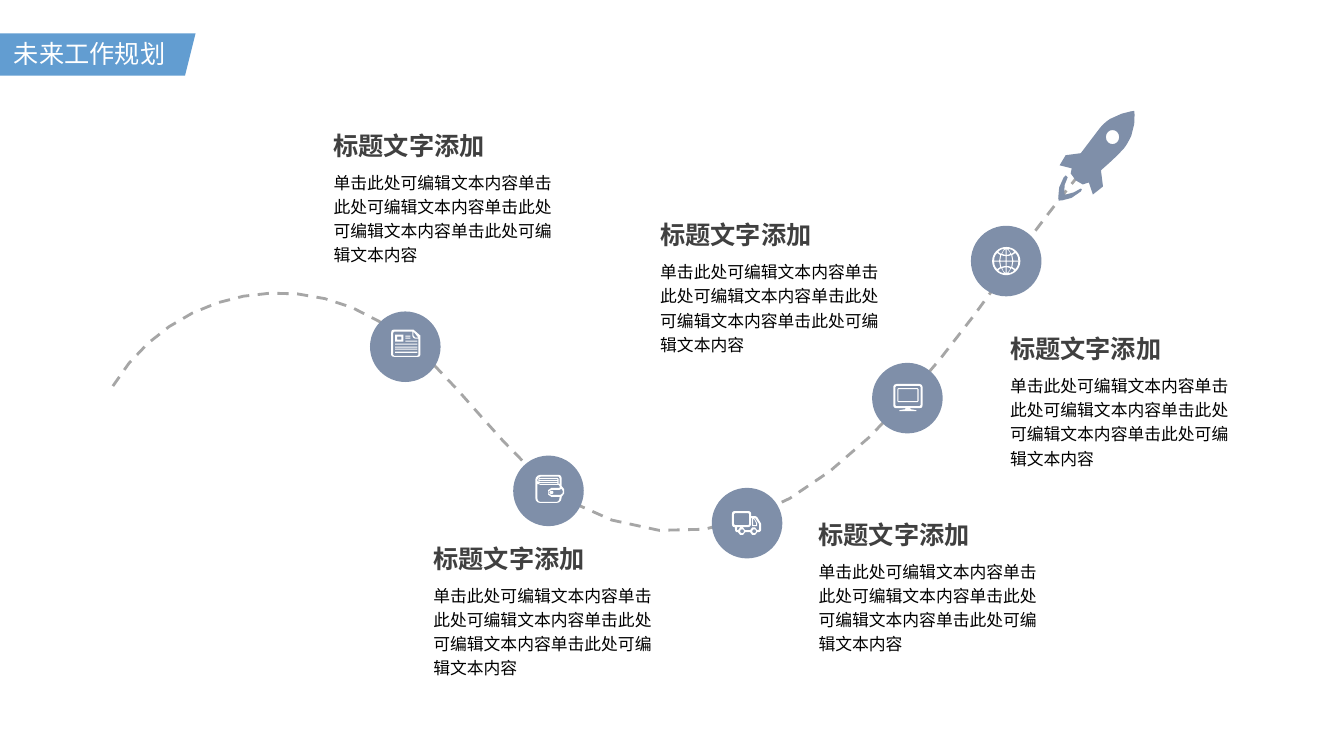
from itertools import product
from math import cos, pi, sin

from lxml import etree
from pptx import Presentation
from pptx.dml.color import RGBColor
from pptx.enum.dml import MSO_LINE
from pptx.enum.shapes import MSO_SHAPE
from pptx.enum.text import MSO_AUTO_SIZE
from pptx.oxml.ns import qn
from pptx.util import Pt

PX = 9144
ICON_STEPS, TRAIL_STEPS = 3, 10
OVAL, PARALLELOGRAM = MSO_SHAPE.OVAL, MSO_SHAPE.PARALLELOGRAM
DASH = MSO_LINE.DASH
GROW = MSO_AUTO_SIZE.SHAPE_TO_FIT_TEXT

SLATE = RGBColor(0x7F, 0x8F, 0xA9)
BLUE = RGBColor(0x62, 0x9D, 0xD1)
GRAY = RGBColor(0xA6, 0xA6, 0xA6)
CHARCOAL = RGBColor(0x40, 0x40, 0x40)
BLACK = RGBColor(0, 0, 0)
WHITE = RGBColor(0xFF, 0xFF, 0xFF)

HEADING_FONT, BODY_FONT = "Arial", "Noto Sans CJK JP"
HEADING = "标题文字添加"
BODY = "单击此处可编辑文本内容" * 4
DIAMETER = 70


def box(x, y, w, h, r=0):
    """Return the contour of a rectangle with corner radius r."""
    if not r:
        return [(x, y), (x + w, y), (x + w, y + h), (x, y + h)]
    steps = 1 + int(r / 2)
    centers = [(x + w - r, y + h - r), (x + r, y + h - r), (x + r, y + r), (x + w - r, y + r)]
    return [(cx + r * cos(a), cy + r * sin(a))
            for corner, (cx, cy) in enumerate(centers)
            for a in [(corner + step / steps) * pi / 2 for step in range(steps + 1)]]


def mirror(contour, size, flips):
    """Flip a contour inside a square, by axis."""
    return [tuple(size - v if flips[i % 2] else v for i, v in enumerate(node)) for node in contour]


def flatten(contour, steps):
    """Turn points and cubic curves into plain points."""
    points = [contour[0]]
    for node in contour[1:]:
        if len(node) == 2:
            points.append(node)
            continue
        controls = [points[-1], node[:2], node[2:4], node[4:]]
        for step in range(1, steps + 1):
            t = step / steps
            weights = ((1 - t) ** 3, 3 * t * (1 - t) ** 2, 3 * t * t * (1 - t), t ** 3)
            points.append(tuple(sum(w * c[axis] for w, c in zip(weights, controls))
                                for axis in (0, 1)))
    return points


class Canvas:
    """Draws elements on one slide in px."""

    def __init__(self, slide):
        self.slide = slide

    def shape(self, kind, x, y, w, h, color):
        """Add a flat preset shape."""
        shape = self.slide.shapes.add_shape(kind, x * PX, y * PX, w * PX, h * PX)
        self.paint(shape, color)

    def paint(self, shape, color):
        """Fill a shape without line or shadow."""
        shape.shadow.inherit = False
        shape.fill.solid()
        shape.fill.fore_color.rgb = color
        shape.line.fill.background()

    def outline(self, contours, x=0, y=0, steps=ICON_STEPS, close=True):
        """Build a freeform whose nested contours are holes."""
        builder = None
        for contour in contours:
            points = [((x + px) * PX, (y + py) * PX) for px, py in flatten(contour, steps)]
            if builder is None:
                builder = self.slide.shapes.build_freeform(*points[0], scale=1.0)
            else:
                builder.move_to(*points[0])
            builder.add_line_segments(points[1:], close=close)
        return builder.convert_to_shape()

    def icon(self, contours, x, y, color):
        """Add a filled icon."""
        self.paint(self.outline(contours, x, y), color)

    def dashed_path(self, contour, color, width):
        """Add an open dashed curve."""
        curve = self.outline([contour], steps=TRAIL_STEPS, close=False)
        curve.shadow.inherit = False
        curve.fill.background()
        curve.line.color.rgb = color
        curve.line.width = Pt(width)
        curve.line.dash_style = DASH

    def text(self, words, x, y, w, h, size, color, font=HEADING_FONT, bold=False, spacing=None):
        """Add a wrapped text box of one paragraph."""
        frame = self.slide.shapes.add_textbox(x * PX, y * PX, w * PX, h * PX).text_frame
        frame.word_wrap = True
        frame.auto_size = GROW
        paragraph = frame.paragraphs[0]
        paragraph.text = words
        paragraph.line_spacing = spacing
        style = paragraph.font
        style.size, style.bold, style.name = Pt(size), bold, font
        style.color.rgb = color
        east_asian = etree.SubElement(paragraph.runs[0].font._element, qn("a:ea"))
        east_asian.set("typeface", BODY_FONT)


TRAIL = [(112, 383), (160, 303, 261, 269, 349, 305), (455, 348, 498, 479, 607, 516),
         (766, 570, 894, 415, 998, 269), (1025, 230, 1055, 192, 1085, 155)]

ROCKET = [
    [(1072, 187), (1073, 188), (1072, 190), (1064, 199, 1050, 199, 1050, 199),
     (1050, 199, 1048, 185, 1055, 176), (1057, 174), (1059, 176),
     (1054, 183, 1056, 193, 1056, 193), (1056, 193, 1066, 192, 1072, 187)],
    box(1097, 129, 13, 14, 6.5),
    [(1125, 110), (1125, 110, 1113, 111, 1101, 118), (1098, 120, 1094, 123, 1091, 127),
     (1072, 152), (1057, 154), (1051, 164), (1063, 167), (1062, 172), (1067, 179),
     (1074, 183), (1080, 181), (1084, 193), (1094, 185), (1092, 169),
     (1100, 162, 1110, 153, 1115, 147), (1118, 143, 1120, 139, 1122, 135),
     (1127, 123, 1125, 110, 1125, 110)],
]

NEWSPAPER = [
    [(3, 0), (22, 0), (29, 6), (29, 25), (28, 27, 28, 27, 26, 27), (3, 27),
     (1, 27, 0, 26, 0, 25), (0, 3), (0, 1, 1, 0, 3, 0)],
    [(3, 2), (21, 2), (21, 6), (21, 7, 22, 9, 24, 9), (27, 9), (27, 25), (26, 26), (3, 26),
     (2, 25), (2, 3)],
    [(22, 2), (22, 6), (24, 8), (27, 8)],
    box(4, 5, 8, 7), box(6, 7, 4, 3),
    box(14, 6, 5, 1), box(14, 8, 5, 1), box(14, 11, 12, 1),
] + [box(4, y, 22, 1) for y in (14, 17, 19, 22)]

WALLET = [
    [(5, 0), (23, 0), (25, 0, 26, 2, 26, 3), (26, 11), (30, 14, 30, 19, 26, 22), (26, 23),
     (26, 26, 24, 28, 21, 28), (5, 28), (2, 28, 0, 26, 0, 23), (0, 5), (0, 3, 2, 0, 5, 0)],
    [(2, 9), (2, 23), (2, 25, 3, 27, 5, 27), (21, 27), (23, 27, 24, 25, 24, 23), (24, 22),
     (16, 22), (11, 22, 11, 13, 16, 13), (24, 13), (24, 11), (23, 10), (5, 10), (2, 9)],
    [(26, 14), (24, 15), (16, 15), (12, 15, 12, 20, 16, 20), (25, 20),
     (28, 19, 28, 16, 26, 14)],
    [(5, 2), (2, 2, 1, 6, 3, 8), (3, 4), (4, 3), (22, 3), (23, 4), (23, 9), (24, 9), (24, 3),
     (23, 2)],
    box(14, 16, 4, 3, 1),
] + [box(4, y, 18, 1) for y in (4, 6, 8)]

TRUCK = [
    [(3, 0), (16, 0), (18, 0, 19, 1, 19, 3), (19, 5), (23, 5), (25, 6), (28, 11),
     (29, 13), (29, 18), (29, 20, 28, 21, 26, 21), (25, 21),
     (24, 25, 19, 25, 18, 21), (13, 21), (12, 25, 7, 25, 6, 21), (5, 21),
     (4, 21, 3, 20, 3, 18), (3, 16), (1, 16, 0, 15, 0, 13), (0, 3), (0, 1, 1, 0, 3, 0)],
    [(19, 7), (19, 13), (19, 14, 18, 16, 16, 16), (5, 16), (5, 19), (6, 19),
     (7, 15, 12, 15, 13, 19), (18, 19), (19, 15, 24, 15, 25, 19), (26, 19),
     (27, 18), (27, 13), (23, 7)],
    [(20, 7), (22, 7), (25, 12), (25, 15), (20, 15)],
    [(21, 8), (22, 8), (24, 12), (24, 14), (21, 14)],
    box(2, 2, 15, 12, 1), box(8, 18, 4, 4, 2), box(20, 18, 4, 4, 2),
]

MONITOR = [
    [(3, 0), (26, 0), (28, 0, 29, 2, 29, 3), (29, 21), (29, 23, 28, 24, 26, 24), (17, 24),
     (17, 25), (23, 26), (23, 27), (6, 27), (6, 26), (12, 25), (12, 24), (3, 24),
     (1, 24, 0, 23, 0, 21), (0, 3), (0, 2, 1, 0, 3, 0)],
    box(2, 2, 25, 20, 1), box(4, 4, 21, 14, 1), box(5, 5, 19, 12),
]

GLOBE_QUARTER = [
    [(2, 13.5), (2, 10, 3, 8, 5, 6), (8, 8), (7, 13.5)],
    [(8, 13.5), (9, 8), (11, 9, 12, 9, 13.5, 9), (13.5, 13.5)],
    [(9, 7), (6, 5), (7, 3, 10, 2, 12, 2)],
    [(13.5, 2), (13.5, 8), (10, 7), (10, 5, 12, 3, 13.5, 2)],
]
GLOBE = [box(0, 0, 28, 28, 14)] + [
    mirror(cell, 28, flips) for flips in product((False, True), repeat=2) for cell in GLOBE_QUARTER]

MILESTONES = [
    ((367, 309), NEWSPAPER, (388, 327), (321, 124)),
    ((509, 452), WALLET, (531, 471), (420, 534)),
    ((706, 484), TRUCK, (726, 507), (802, 510)),
    ((865, 360), MONITOR, (886, 381), (645, 213)),
    ((963, 224), GLOBE, (984, 245), (992, 326)),
]


def main():
    """Build and save the roadmap slide."""
    deck = Presentation()
    deck.slide_width, deck.slide_height = 1333 * PX, 750 * PX
    canvas = Canvas(deck.slides.add_slide(deck.slide_layouts[6]))
    canvas.dashed_path(TRAIL, GRAY, 2)
    canvas.icon(ROCKET, 0, 0, SLATE)
    for disc, icon, icon_at, (left, top) in MILESTONES:
        canvas.shape(OVAL, *disc, DIAMETER, DIAMETER, SLATE)
        canvas.icon(icon, *icon_at, WHITE)
        canvas.text(HEADING, left, top, 215, 40, 18, CHARCOAL, bold=True)
        canvas.text(BODY, left, top + 38, 246, 107, 12, BLACK, font=BODY_FONT, spacing=1.2)
    canvas.shape(PARALLELOGRAM, -53, 33, 247, 42, BLUE)
    canvas.text("未来工作规划", 4, 33, 181, 41, 18, WHITE)
    deck.save("out.pptx")


if __name__ == "__main__":
    main()
